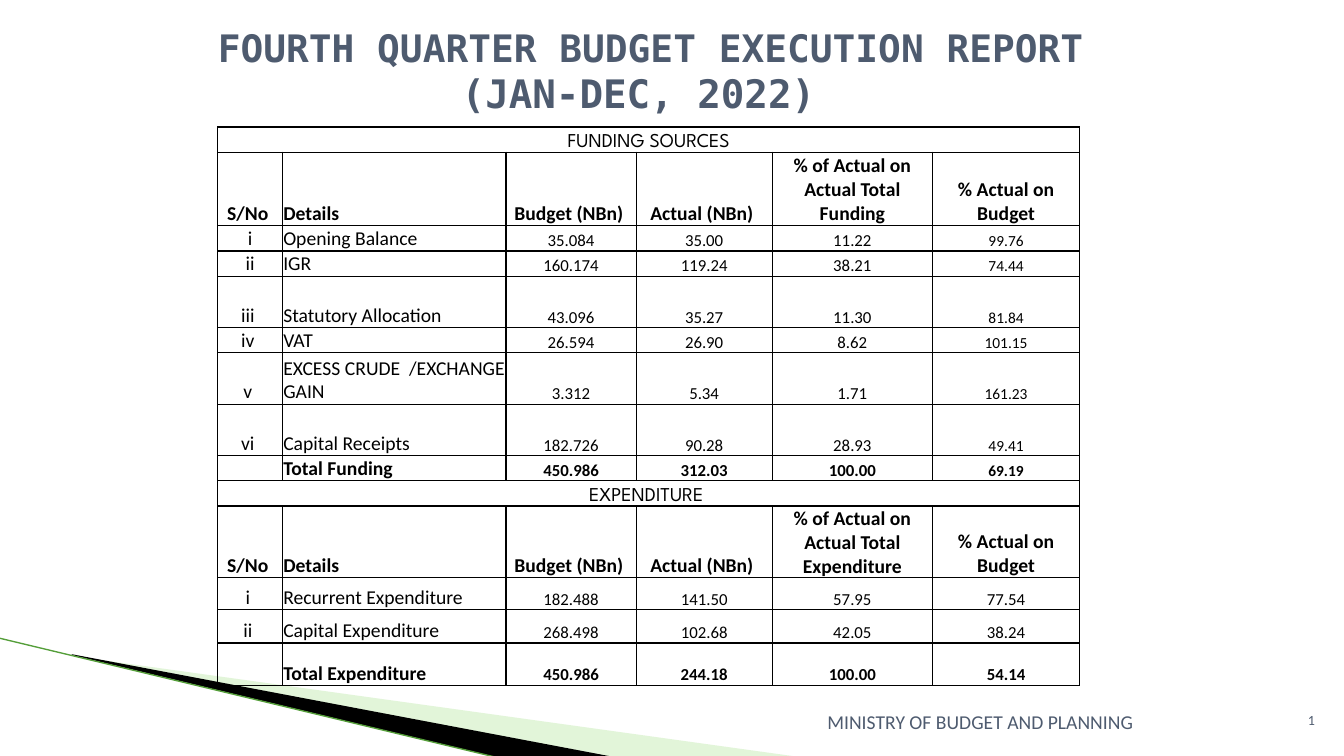
from pptx import Presentation
from pptx.dml.color import RGBColor
from pptx.enum.shapes import MSO_CONNECTOR
from pptx.enum.text import MSO_ANCHOR as Anchor, PP_ALIGN as Align
from pptx.util import Pt
from lxml.etree import SubElement
from pptx.oxml import parse_xml
from pptx.oxml.ns import nsdecls, qn

PX = 9144  # 100 px to the inch
SLATE = "4E5B6F"


def color(hex):
    return RGBColor.from_string(hex)


def write(para, text, align, **style):
    """Add an aligned run; a line feed in the text becomes a line break."""
    para.alignment = align
    for i, line in enumerate(text.split("\n")):
        if i:
            para.add_line_break()
        run = para.add_run()
        run.text = line
        run.font.color.rgb = color(style.get("ink", "000000"))
        for key in ("name", "bold"):
            setattr(run.font, key, style.get(key))
        run.font.size = Pt(style["size"])


deck = Presentation()
deck.slide_width, deck.slide_height = 1333 * PX, 750 * PX
slide = deck.slides.add_slide(deck.slide_layouts[6])
shapes = slide.shapes

# Corner wedges: each outline runs past its own frame
wedges = [
    ("B8E7A1", 40, (104, 547, 554, 158), [(73, 651), (793, 751), (608, 751), (73, 650)]),
    ("000000", 100, (-8, 633, 554, 92), [(71, 649), (609, 751), (496, 752), (72, 650)]),
]
for tint, alpha, (left, top, width, height), points in wedges:
    pen = shapes.build_freeform(*points[0], scale=PX)
    pen.add_line_segments(points[1:], close=True)
    wedge = pen.convert_to_shape()
    shift = {"x": wedge.left // PX - left, "y": wedge.top // PX - top}
    outline = wedge._element.find(".//" + qn("a:path"))
    outline.set("w", str(width))
    outline.set("h", str(height))
    for point in outline.iter(qn("a:pt")):
        for axis, move in shift.items():
            point.set(axis, str(int(point.get(axis)) + move))
    wedge.left, wedge.top = left * PX, top * PX
    wedge.width, wedge.height = width * PX, height * PX
    wedge.shadow.inherit = False
    wedge.fill.solid()
    wedge.fill.fore_color.rgb = color(tint)
    wedge.line.fill.background()
    if alpha < 100:
        node = wedge.fill._xPr.find(".//" + qn("a:srgbClr"))
        SubElement(node, qn("a:alpha"), val=str(alpha * 1000))

edge = shapes.add_connector(MSO_CONNECTOR.STRAIGHT, -1 * PX, 633 * PX, 495 * PX, 752 * PX)
edge.line.color.rgb = color("549E39")
edge.line.width = Pt(0.95)
SubElement(edge._element.spPr, qn("a:effectLst"))

# Title, footer and page number
labels = [
    ((1261, 701, 53, 40), Align.RIGHT, Anchor.TOP,
     [("1", dict(size=10, name="Calibri"))]),
    ((195, 14, 900, 112), Align.CENTER, Anchor.MIDDLE,
     [("FOURTH QUARTER BUDGET EXECUTION REPORT\n",
       dict(size=27, name="DejaVu Sans Mono", bold=True)),
      ("(JAN-DEC, 2022) ", dict(size=28, name="DejaVu Sans Mono", bold=True))]),
    ((721, 699, 413, 39), Align.RIGHT, Anchor.TOP,
     [("MINISTRY OF BUDGET AND PLANNING", dict(size=14, name="Calibri"))]),
]
for box, align, anchor, runs in labels:
    frame = shapes.add_textbox(*(v * PX for v in box)).text_frame
    frame.word_wrap = True
    frame.vertical_anchor = anchor
    for text, style in runs:
        write(frame.paragraphs[0], text, align, ink=SLATE, **style)

# Budget table: row height, kind, last column size, texts
head = ["S/No ", "Details", "Budget (NBn) ", "Actual (NBn) "]
rows = [
    (25, "band", 14, ["FUNDING SOURCES"]),
    (73, "head", 14, head + ["% of Actual on Actual Total Funding", "% Actual on Budget"]),
    (25, "item", 11, ["i", "Opening Balance", "35.084", "35.00", "11.22", "99.76"]),
    (25, "item", 11, ["ii", "IGR", "160.174", "119.24", "38.21", "74.44"]),
    (51, "item", 11, ["iii ", "Statutory Allocation", "43.096", "35.27", "11.30", "81.84"]),
    (25, "item", 11, ["iv ", "VAT", "26.594", "26.90", "8.62", "101.15"]),
    (51, "item", 11, ["v ", "EXCESS CRUDE  /EXCHANGE GAIN", "3.312", "5.34", "1.71", "161.23"]),
    (51, "item", 11, ["vi ", "Capital Receipts", "182.726", "90.28", "28.93", "49.41"]),
    (25, "total", 11, ["", "Total Funding", "450.986", "312.03", "100.00", "69.19"]),
    (25, "band", 14, ["EXPENDITURE "]),
    (70, "head", 14, head + ["% of Actual on Actual Total Expenditure", "% Actual on Budget"]),
    (32, "item", 12, ["i ", "Recurrent Expenditure", "182.488", "141.50", "57.95", "77.54"]),
    (33, "item", 12, ["ii ", "Capital Expenditure", "268.498", "102.68", "42.05", "38.24"]),
    (42, "total", 12, ["", "Total Expenditure", "450.986", "244.18", "100.00", "54.14"]),
]
widths = [64, 222, 129, 135, 159, 146]
high = sum(row[0] for row in rows)
table = shapes.add_table(len(rows), len(widths), 216 * PX, 126 * PX,
                         sum(widths) * PX, high * PX).table
table.first_row = table.horz_banding = False
for col, width in zip(table.columns, widths):
    col.width = width * PX

margins = dict(margin_left=PX, margin_right=PX, margin_top=PX, margin_bottom=0)
for r, (height, kind, last, texts) in enumerate(rows):
    table.rows[r].height = height * PX
    if kind == "band":
        table.cell(r, 0).merge(table.cell(r, 5))
    for c in range(len(widths)):
        cell = table.cell(r, c)
        cell.vertical_anchor = Anchor.BOTTOM
        for key, value in margins.items():
            setattr(cell, key, value)
        cell.fill.background()
        props = cell._tc.get_or_add_tcPr()
        for i, side in enumerate("LRTB"):
            props.insert(i, parse_xml(
                f'<a:ln{side} {nsdecls("a")} w="12700"><a:solidFill>'
                f'<a:srgbClr val="000000"/></a:solidFill></a:ln{side}>'))
        para = cell.text_frame.paragraphs[0]
        text = texts[c] if c < len(texts) else ""
        if not text:
            SubElement(para._p, qn("a:endParaRPr"), sz="1400")
            continue
        size = 14 if c < 2 or kind == "head" else last if c == 5 else 12
        write(para, text, Align.LEFT if c == 1 else Align.CENTER, size=size,
              name="League Spartan" if kind == "band" else "Calibri",
              bold=kind in ("head", "total"))

deck.save("out.pptx")
